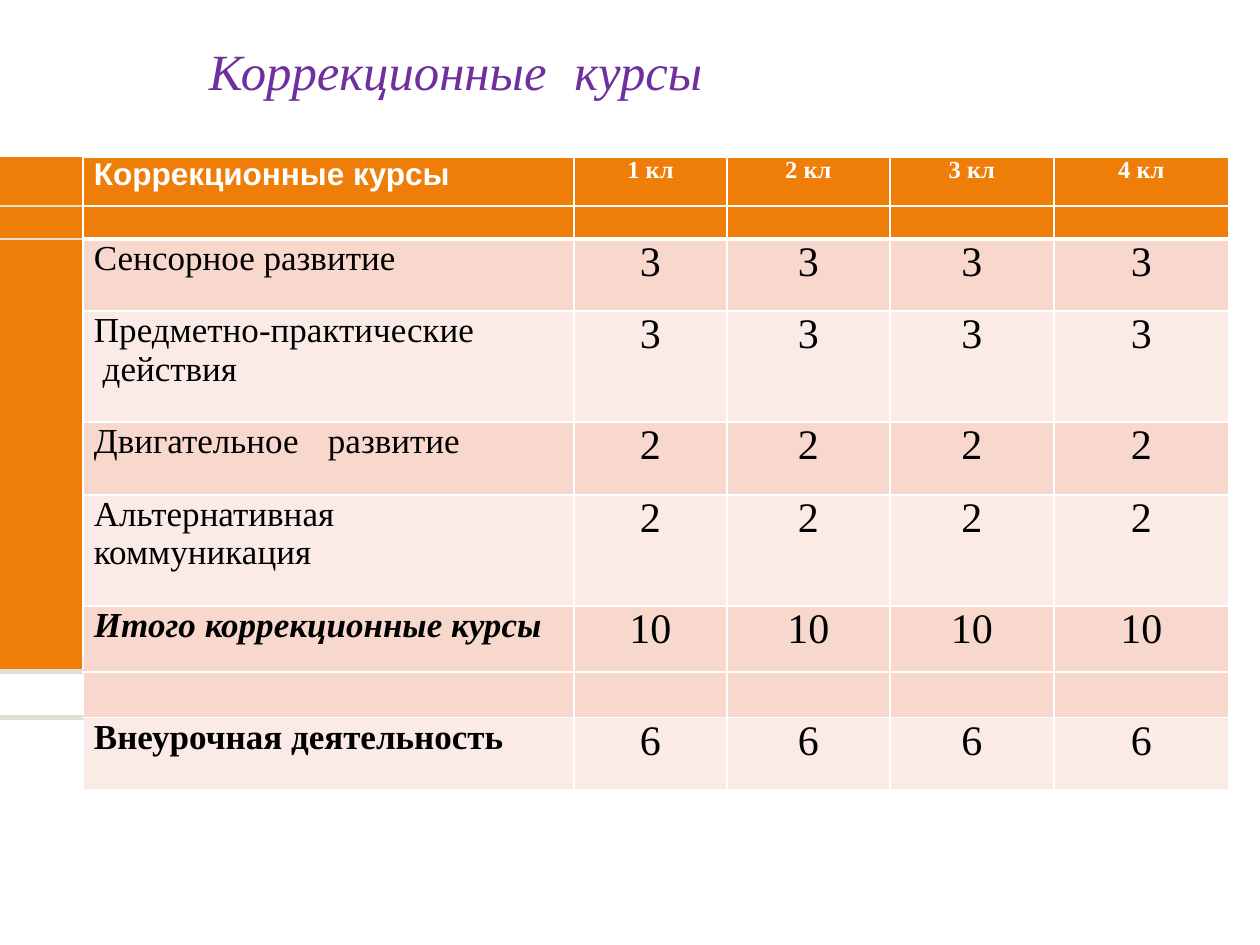
from lxml import etree
from pptx import Presentation
from pptx.dml.color import RGBColor
from pptx.enum.text import PP_ALIGN
from pptx.oxml.ns import qn
from pptx.util import Pt

LEFT, CENTER = PP_ALIGN.LEFT, PP_ALIGN.CENTER
PX = 914400 / 126

WHITE = RGBColor(0xFF, 0xFF, 0xFF)
BLACK = RGBColor(0x00, 0x00, 0x00)
PURPLE = RGBColor(0x6F, 0x2F, 0x9F)
ORANGE = RGBColor(0xEF, 0x7E, 0x09)
BEIGE = RGBColor(0xE2, 0xDE, 0xD1)
PINK = RGBColor(0xF8, 0xD7, 0xCC)
PALE = RGBColor(0xFB, 0xEB, 0xE7)

SERIF, SANS = "Times New Roman", "Arial"
COLS = [84, 491, 153, 163, 164, 175]
CLASSES = range(1, 5)
TAB = 234
INDENT = 11
THIN = (WHITE, 1)
SIDE_LINES = {1: (BEIGE, 1.5), 2: (BEIGE, 1.5), 7: (BEIGE, 3.5), 8: (BEIGE, 3.5)}

ROWS = [
    (157, None, None),
    (49, ORANGE, ORANGE),
    (33, ORANGE, ORANGE),
    (72, ORANGE, PINK),
    (111, ORANGE, PALE),
    (73, ORANGE, PINK),
    (111, ORANGE, PALE),
    (66, ORANGE, PINK),
    (46, None, PINK),
    (72, None, PALE),
]
COURSES = [
    (3, "Сенсорное развитие", 3, 1.4, {}),
    (4, "Предметно-практические\n действия", 3, 2.4, {}),
    (5, "Двигательное\tразвитие", 2, 2.4, {}),
    (6, "Альтернативная\nкоммуникация", 2, 2.4, {}),
    (7, "Итого коррекционные курсы", 10, 2.4, {"bold": True, "italic": True}),
    (9, "Внеурочная деятельность", 6, 2.4, {"bold": True}),
]


def px(n):
    return round(n * PX)


def write_text(tf, text, size=20, font=SERIF, color=BLACK, bold=False,
               italic=False, align=LEFT, before=0):
    for i, line in enumerate(text.split("\n")):
        p = tf.add_paragraph() if i else tf.paragraphs[0]
        p.alignment = align
        p.space_before = Pt(0 if i else before)
        if "\t" in line:
            tabs = etree.SubElement(p._p.get_or_add_pPr(), qn("a:tabLst"))
            etree.SubElement(tabs, qn("a:tab"), pos=str(px(TAB)), algn="l")
        r = p.add_run()
        r.text = line
        r.font.name, r.font.size = font, Pt(size)
        r.font.bold, r.font.italic = bold, italic
        r.font.color.rgb = color


class Deck:
    def __init__(self, width, height):
        self.prs = Presentation()
        self.prs.slide_width, self.prs.slide_height = px(width), px(height)
        self.s = self.prs.slides.add_slide(self.prs.slide_layouts[6])

    def table(self, x, y, cols, heights):
        sp = self.s.shapes.add_table(len(heights), len(cols), px(x), px(y),
                                     px(sum(cols)), px(sum(heights)))
        table = sp.table
        table.first_row = table.horz_banding = False
        for column, width in zip(table.columns, cols):
            column.width = px(width)
        for row, height in zip(table.rows, heights):
            row.height = px(height)
        return table

    def cell(self, cell, fill, borders):
        cell.margin_left = cell.margin_right = 0
        cell.margin_top = cell.margin_bottom = 0
        cell.text_frame.paragraphs[0]._p.get_or_add_endParaRPr().set("sz", "1000")
        for side in "LRTB":
            self.border(cell, side, borders.get(side))
        if fill is None:
            cell.fill.background()
        else:
            cell.fill.solid()
            cell.fill.fore_color.rgb = fill

    def border(self, cell, side, line):
        color, width = line or (None, 0)
        ln = etree.SubElement(cell._tc.get_or_add_tcPr(), qn("a:ln" + side),
                              w=str(Pt(width)))
        if color is None:
            etree.SubElement(ln, qn("a:noFill"))
        else:
            solid = etree.SubElement(ln, qn("a:solidFill"))
            etree.SubElement(solid, qn("a:srgbClr"), val=str(color))

    def text(self, cell, text, left=0, top=0, right=0, **style):
        cell.margin_left, cell.margin_top = px(left), px(top)
        cell.margin_right = px(right)
        write_text(cell.text_frame, text, **style)


def line_below(row, col):
    if col == 0:
        return SIDE_LINES.get(row)
    return (WHITE, 3) if row == 2 else THIN


def main():
    deck = Deck(1260, 945)
    table = deck.table(-1, 0, COLS, [height for height, _, _ in ROWS])
    for row, (_, side_fill, fill) in enumerate(ROWS):
        for col in range(len(COLS)):
            borders = {"R": THIN, "T": line_below(row - 1, col),
                       "B": line_below(row, col)}
            if col:
                borders["L"] = THIN
            deck.cell(table.cell(row, col), fill if col else side_fill, borders)

    title = {"size": 29, "color": PURPLE, "italic": True}
    deck.text(table.cell(0, 1), "Коррекционные", left=126, top=45, **title)
    deck.text(table.cell(0, 2), "курсы", top=45, right=24, align=CENTER, **title)

    head = {"color": WHITE, "bold": True, "before": 2.6}
    deck.text(table.cell(1, 1), "Коррекционные курсы", left=INDENT, size=18,
              font=SANS, **head)
    for n in CLASSES:
        deck.text(table.cell(1, n + 1), f"{n} кл", size=14, align=CENTER, **head)

    for row, name, hours, before, style in COURSES:
        deck.text(table.cell(row, 1), name, left=INDENT, before=before, **style)
        for n in CLASSES:
            deck.text(table.cell(row, n + 1), str(hours), size=24,
                      align=CENTER, before=before)

    deck.prs.save("out.pptx")


if __name__ == "__main__":
    main()
